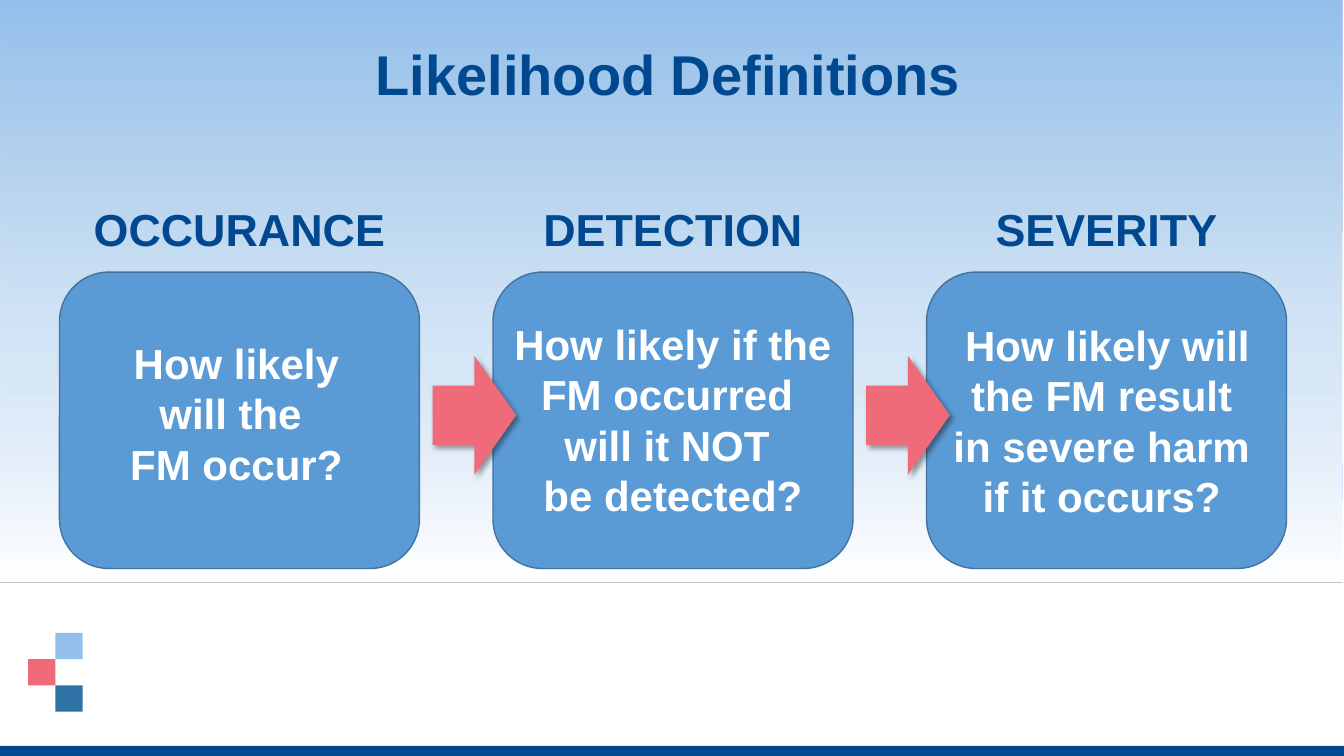
from lxml import etree
from pptx import Presentation
from pptx.dml.color import RGBColor
from pptx.enum.shapes import MSO_SHAPE as SHAPE
from pptx.enum.text import MSO_ANCHOR, MSO_AUTO_SIZE, PP_ALIGN
from pptx.oxml import parse_xml
from pptx.oxml.ns import nsdecls, qn
from pptx.util import Inches, Pt

COLORS = {
    "navy": "004991", "sky": "93BFEB", "steel": "2E72A5", "coral": "EF6B7A",
    "box": "5B9BD5", "outline": "43739E", "white": "FFFFFF",
}
FONT = "Arial"
SLIDE_W, SLIDE_H = 13.33, 7.5
LEFT, PITCH, BOX_W = 0.59, 4.3, 3.57
BOX_TOP, BOX_H = 2.7, 2.94
ARROW_W, ARROW_H = 0.83, 1.18

# heading, question, then the question's offset in its column, top, width, height
DEFINITIONS = [
    ("OCCURANCE", "How likely will the \vFM occur?", 0.28, 3.3, 2.95, 1.62),
    ("DETECTION", "How likely if the FM occurred \vwill it NOT \vbe detected?",
     0, 3.11, BOX_W, 2.12),
    ("SEVERITY", "How likely will the FM result \vin severe harm \vif it occurs? ",
     0.04, 3.12, 3.51, 2.12),
]

prs = Presentation()
prs.slide_width, prs.slide_height = Inches(SLIDE_W), Inches(SLIDE_H)
slide = prs.slides.add_slide(prs.slide_layouts[5])


def add_block(kind, left, top, width, height, color):
    """Add a shape with a plain fill, no outline and no shadow."""
    block = slide.shapes.add_shape(
        kind, Inches(left), Inches(top), Inches(width), Inches(height))
    block.shadow.inherit = False
    block.fill.solid()
    block.fill.fore_color.rgb = RGBColor.from_string(COLORS[color])
    block.line.fill.background()
    return block


def write_bold(frame, text, size, color):
    """Fill a text frame with one centred bold paragraph."""
    frame.word_wrap = True
    frame.text = text
    paragraph = frame.paragraphs[0]
    paragraph.alignment = PP_ALIGN.CENTER
    for run in paragraph.runs:
        run.font.name, run.font.size, run.font.bold = FONT, Pt(size), True
        run.font.color.rgb = RGBColor.from_string(COLORS[color])
    return paragraph


# Background: fading sky, bottom bar and corner squares
sky = add_block(SHAPE.RECTANGLE, 0, 0, SLIDE_W, 5.79, "sky")
sky.fill.gradient()
sky.fill.gradient_angle = 270
stops = sky.element.spPr.find(qn("a:gradFill")).find(qn("a:gsLst"))
for stop in list(stops):
    stops.remove(stop)
for percent, color, alpha in [(0, COLORS["sky"], 100), (29, "B5D2EC", 100),
                              (54, "BCD7F2", 69), (99, COLORS["white"], 100)]:
    stop = etree.SubElement(stops, qn("a:gs"), pos=str(percent * 1000))
    shade = etree.SubElement(stop, qn("a:srgbClr"), val=color)
    etree.SubElement(shade, qn("a:alpha"), val=str(alpha * 1000))

add_block(SHAPE.RECTANGLE, 0, 7.4, SLIDE_W, SLIDE_H - 7.4, "navy")
for column, row, color in [(1, 0, "sky"), (1, 2, "steel"), (0, 1, "coral")]:
    add_block(SHAPE.RECTANGLE, 0.28 + column * 0.27, 6.28 + row * 0.26,
              0.27, 0.26, color)

# Definition boxes
for column in range(len(DEFINITIONS)):
    box = add_block(SHAPE.ROUNDED_RECTANGLE, LEFT + column * PITCH, BOX_TOP,
                    BOX_W, BOX_H, "box")
    box.line.color.rgb = RGBColor.from_string(COLORS["outline"])
    box.line.width = Pt(1)

# Title, brought in front of the background
title = slide.shapes.title
title.left, title.top = Inches(0.55), Inches(0.42)
title.width, title.height = Inches(12.15), Inches(0.83)
title.text_frame.vertical_anchor = MSO_ANCHOR.TOP
title_line = write_bold(title.text_frame, "Likelihood Definitions", 40, "navy")
title_line.line_spacing = 0.9
title_line.space_before = Pt(10)
title.element.getparent().append(title.element)

# Arrows between the boxes
for gap in range(len(DEFINITIONS) - 1):
    arrow = add_block(SHAPE.RIGHT_ARROW, 4.29 + gap * PITCH, 3.53,
                      ARROW_W, ARROW_H, "coral")
    arrow.element.spPr.find(qn("a:effectLst")).append(parse_xml(
        f'<a:outerShdw {nsdecls("a")} blurRad="{Pt(4)}" dist="{Pt(3)}" '
        'dir="2700000" algn="tl" rotWithShape="0"><a:srgbClr val="000000">'
        '<a:alpha val="40000"/></a:srgbClr></a:outerShdw>'))

# Headings and questions
for column, (heading, question, offset, top, width, height) in enumerate(DEFINITIONS):
    left = LEFT + column * PITCH
    for text, size, color, area in [
            (heading, 32, "navy", (left, 1.95, BOX_W, 0.64)),
            (question, 30, "white", (left + offset, top, width, height))]:
        label = slide.shapes.add_textbox(*(Inches(length) for length in area))
        label.text_frame.auto_size = MSO_AUTO_SIZE.SHAPE_TO_FIT_TEXT
        write_bold(label.text_frame, text, size, color)

prs.save("out.pptx")
